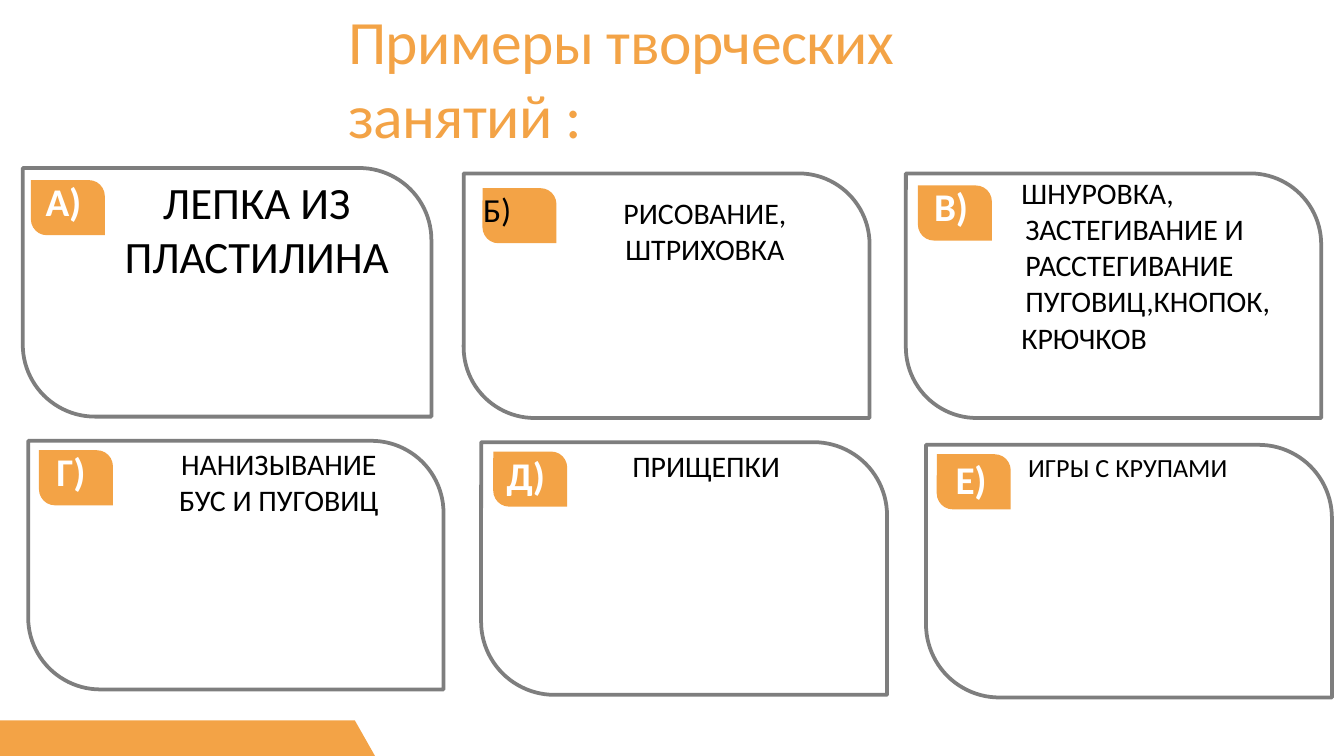
from pptx import Presentation
from pptx import util as u
from pptx.dml.color import RGBColor
from pptx.enum import shapes, text

COLORS = {"orange": "F3A346", "gray": "7E7E7E", "black": "000000", "white": "FFFFFF"}
FONT = "Calibri"
CENTER = text.PP_ALIGN.CENTER
LEFT = text.PP_ALIGN.LEFT
WIDTH = 10
HEIGHT = WIDTH * 9 / 16
CORNER = 0.29  # corner radius as a share of the height
BADGE_SIZE = (0.55, 0.41)

# Cards: frame box, badge position
CARDS = [
    ((0.17, 1.25, 3.04, 1.85), (0.23, 1.34)),
    ((3.45, 1.29, 3.02, 1.82), (3.59, 1.40)),
    ((6.74, 1.29, 3.09, 1.82), (6.83, 1.38)),
    ((0.21, 3.28, 3.09, 1.85), (0.29, 3.35)),
    ((3.58, 3.29, 3.02, 1.88), (3.67, 3.36)),
    ((6.89, 3.31, 3.02, 1.88), (6.97, 3.38)),
]
BLACK_LETTERS = {1: "Б)"}  # written inside the badge itself

# White badge letters: text, box, letter spacing
LETTERS = [
    ("А)", (0.33, 1.31, 0.30, 0.38), -0.1),
    ("В)", (6.94, 1.35, 0.28, 0.38), -0.1),
    ("Г)", (0.41, 3.32, 0.25, 0.38), 0),
    ("Д)", (3.76, 3.35, 0.32, 0.38), 0),
    ("Е)", (7.10, 3.38, 0.26, 0.38), -0.1),
]

# Activities: paragraphs, box, format
ACTIVITIES = [
    (["ЛЕПКА ИЗ ПЛАСТИЛИНА"], (0.87, 1.29, 2.07, 0.82), dict(size=24, align=CENTER)),
    (["РИСОВАНИЕ, ШТРИХОВКА"], (3.73, 1.32, 2.62, 0.67),
     dict(align=CENTER, margin=0.41, before=0, top=0.13)),
    (["ШНУРОВКА, ЗАСТЕГИВАНИЕ И РАССТЕГИВАНИЕ ПУГОВИЦ,КНОПОК,", "КРЮЧКОВ"],
     (7.52, 1.29, 2.02, 1.38), dict(margin=0.11, indent=-0.03)),
    (["НАНИЗЫВАНИЕ БУС И ПУГОВИЦ"], (1.22, 3.31, 1.70, 0.55), dict(align=CENTER)),
    (["ПРИЩЕПКИ"], (4.38, 3.32, 1.74, 0.28), dict(align=CENTER, before=1)),
    (["ИГРЫ С КРУПАМИ"], (7.64, 3.35, 1.93, 0.25),
     dict(size=14, margin=0.43, indent=-0.42, before=1)),
]


def inches(values):
    return [u.Inches(v) for v in values]


def rgb(name):
    return RGBColor.from_string(COLORS[name])


def write(sp, paragraphs, size=16, color="black", bold=False, align=LEFT,
          margin=0.01, indent=0, before=1.1, left=0, top=0.01, spacing=0):
    tf = sp.text_frame
    tf.word_wrap = True
    tf.auto_size = text.MSO_AUTO_SIZE.NONE
    tf.vertical_anchor = text.MSO_ANCHOR.TOP
    tf.margin_right = tf.margin_bottom = 0
    tf.margin_left, tf.margin_top = inches((left, top))
    for i, line in enumerate(paragraphs):
        p = tf.add_paragraph() if i else tf.paragraphs[0]
        p.alignment = align
        p.space_before = u.Pt(before)
        # Paragraph indents
        pPr = p._p.get_or_add_pPr()
        pPr.set("marL", str(u.Inches(margin)))
        pPr.set("indent", str(u.Inches(indent)))
        r = p.add_run()
        r.text = line
        r.font.name = FONT
        r.font.size = u.Pt(size)
        r.font.bold = bold
        r.font.color.rgb = rgb(color)
        if spacing:
            r._r.get_or_add_rPr().set("spc", str(round(spacing * 100)))


def add_text(s, paragraphs, box, **fmt):
    write(s.shapes.add_textbox(*inches(box)), paragraphs, **fmt)


def paint(sp, fill=None, line=None):
    sp.shadow.inherit = False
    if fill:
        sp.fill.solid()
        sp.fill.fore_color.rgb = rgb(fill)
    else:
        sp.fill.background()
    if line:
        sp.line.color.rgb = rgb(line)
        sp.line.width = u.Pt(2)
    else:
        sp.line.fill.background()


def add_leaf(s, box, **look):
    """Rectangle rounded at the top right and bottom left."""
    sp = s.shapes.add_shape(shapes.MSO_SHAPE.ROUND_2_DIAG_RECTANGLE, *inches(box))
    sp.adjustments[0] = 0
    sp.adjustments[1] = CORNER
    paint(sp, **look)
    return sp


def add_polygon(s, points, **look):
    points = [tuple(inches(pt)) for pt in points]
    fb = s.shapes.build_freeform(*points[0])
    fb.add_line_segments(points[1:], close=True)
    paint(fb.convert_to_shape(), **look)


def main():
    prs = Presentation()
    prs.slide_width, prs.slide_height = inches((WIDTH, HEIGHT))
    s = prs.slides.add_slide(prs.slide_layouts[5])

    # Title
    title = s.shapes.title
    title.left, title.top, title.width, title.height = inches((2.58, 0.01, 5.28, 1.12))
    write(title, ["Примеры творческих занятий :"], size=33, color="orange",
          before=1, spacing=-0.3)

    # Card frames, then badges; negative insets undo the corner inset
    for frame, _ in CARDS:
        add_leaf(s, frame, line="gray")
    for i, (_, corner) in enumerate(CARDS):
        badge = add_leaf(s, corner + BADGE_SIZE, fill="orange")
        if i in BLACK_LETTERS:
            write(badge, [BLACK_LETTERS[i]], size=18, margin=0, before=0,
                  left=-0.03, top=-0.03)

    # White badge letters
    for letter, box, spacing in LETTERS:
        add_text(s, [letter], box, size=21, color="white", bold=True, before=1,
                 spacing=spacing)

    # Activity names
    for paragraphs, box, fmt in ACTIVITIES:
        add_text(s, paragraphs, box, **fmt)

    # Footer band
    add_polygon(s, [(0, 5.36), (2.64, 5.36), (2.79, HEIGHT), (0, HEIGHT)], fill="orange")

    prs.save("out.pptx")


if __name__ == "__main__":
    main()
